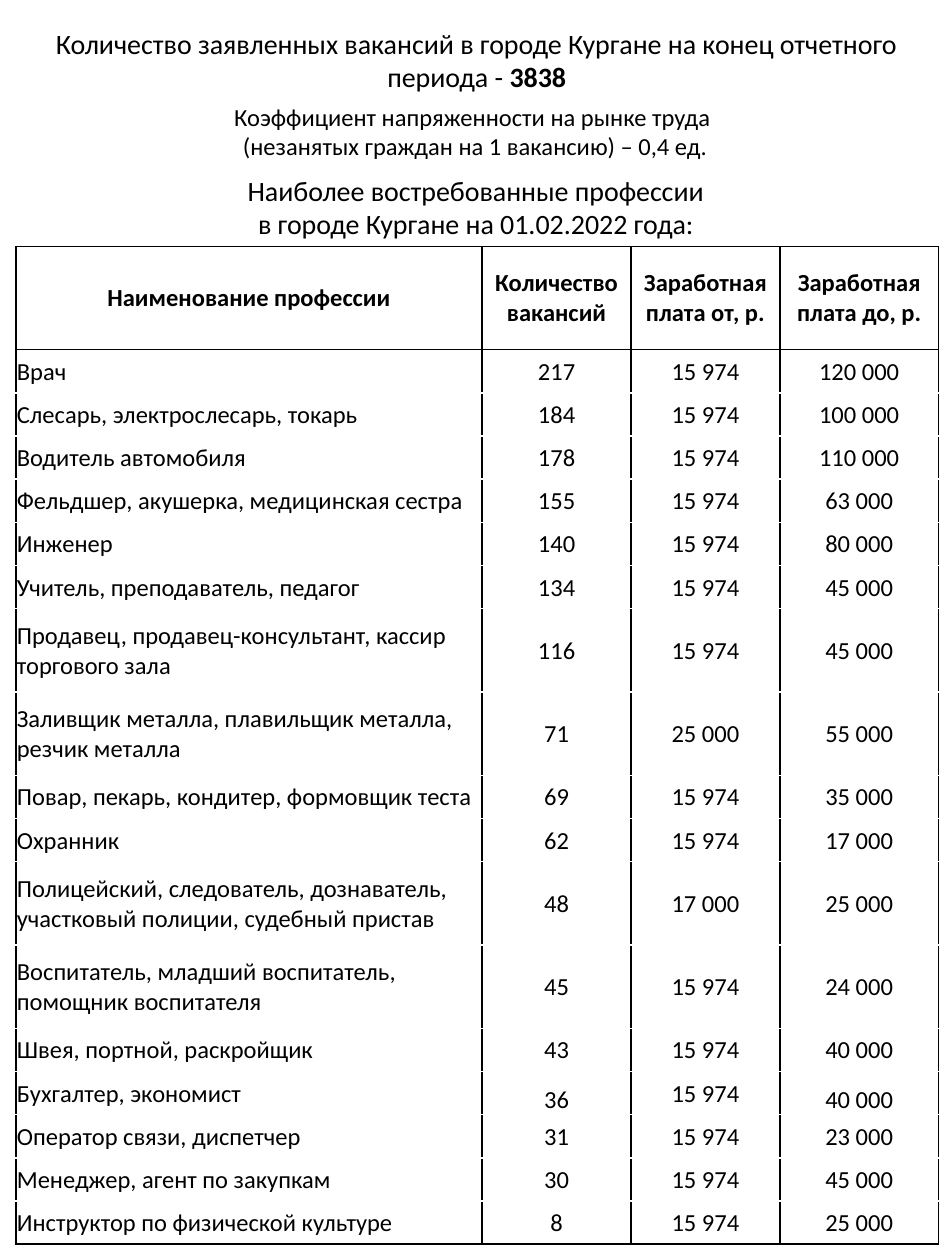
"""Build a slide listing the most wanted professions in the city of Kurgan."""
from dataclasses import dataclass

from lxml.etree import SubElement
from pptx import Presentation
from pptx.dml.color import RGBColor
from pptx.enum.text import MSO_ANCHOR, MSO_AUTO_SIZE, PP_ALIGN
from pptx.oxml.ns import qn
from pptx.util import Cm, Pt


@dataclass(frozen=True)
class Theme:
    font: str = "Calibri"
    ink: str = "000000"
    paper: str = "FFFFFF"
    heading: int = 16
    body: int = 14
    rule: int = 1


theme = Theme()


def write(frame, lines, size, align=PP_ALIGN.CENTER):
    frame.word_wrap = True
    for index, line in enumerate(lines):
        paragraph = frame.add_paragraph() if index else frame.paragraphs[0]
        paragraph.alignment = align
        for words, bold in line:
            run = paragraph.add_run()
            run.text = words
            run.font.name = theme.font
            run.font.size = Pt(size)
            run.font.bold = bold
            run.font.color.rgb = RGBColor.from_string(theme.ink)


def rule_cell(cell, top, bottom):
    properties = cell._tc.get_or_add_tcPr()
    sides = {"lnL": theme.ink, "lnR": theme.ink, "lnT": top, "lnB": bottom}
    for side, color in sides.items():
        line = SubElement(properties, qn(f"a:{side}"), w=str(Pt(theme.rule)))
        fill = SubElement(line, qn("a:solidFill"))
        SubElement(fill, qn("a:srgbClr"), val=color)


presentation = Presentation()
presentation.slide_width = Cm(19.05)
presentation.slide_height = Cm(25.4)
slide = presentation.slides.add_slide(presentation.slide_layouts[5])

title = slide.shapes.title
title.left, title.top, title.width, title.height = Cm(0.58), Cm(0.4), Cm(18.06), Cm(1.62)
title.text_frame.vertical_anchor = MSO_ANCHOR.TOP
title.text_frame.auto_size = MSO_AUTO_SIZE.SHAPE_TO_FIT_TEXT
write(title.text_frame, [[
    ("Количество заявленных вакансий в городе Кургане на конец отчетного периода - ", False),
    ("3838", True),
]], theme.heading)

captions = [
    (0.55, 1.93, 18.06, 1.45, theme.body,
     ["Коэффициент напряженности на рынке труда ",
      "(незанятых граждан на 1 вакансию) – 0,4 ед."]),
    (1.2, 3.37, 16.79, 1.62, theme.heading,
     ["Наиболее востребованные профессии",
      "в городе Кургане на 01.02.2022 года:"]),
]
for left, top, width, height, size, lines in captions:
    caption = slide.shapes.add_textbox(Cm(left), Cm(top), Cm(width), Cm(height))
    caption.text_frame.auto_size = MSO_AUTO_SIZE.SHAPE_TO_FIT_TEXT
    write(caption.text_frame, [[(line, False)] for line in lines], size)

header_height, single_height, double_height = 2.08, 0.87, 1.68
column_widths = [9.4, 3, 3, 3.2]
headers = ["Наименование профессии", "Количество вакансий",
           "Заработная плата от, р.", "Заработная плата до, р."]
professions = [
    ("Врач", "217", "15 974", "120 000"),
    ("Слесарь, электрослесарь, токарь", "184", "15 974", "100 000"),
    ("Водитель автомобиля", "178", "15 974", "110 000"),
    ("Фельдшер, акушерка, медицинская сестра", "155", "15 974", "63 000"),
    ("Инженер", "140", "15 974", "80 000"),
    ("Учитель, преподаватель, педагог", "134", "15 974", "45 000"),
    ("Продавец, продавец-консультант, кассир торгового зала", "116", "15 974", "45 000"),
    ("Заливщик металла, плавильщик металла, резчик металла", "71", "25 000", "55 000"),
    ("Повар, пекарь, кондитер, формовщик теста", "69", "15 974", "35 000"),
    ("Охранник", "62", "15 974", "17 000"),
    ("Полицейский, следователь, дознаватель, участковый полиции, судебный пристав",
     "48", "17 000", "25 000"),
    ("Воспитатель, младший воспитатель, помощник воспитателя", "45", "15 974", "24 000"),
    ("Швея, портной, раскройщик", "43", "15 974", "40 000"),
    ("Бухгалтер, экономист", "36", "15 974", "40 000"),
    ("Оператор связи, диспетчер", "31", "15 974", "23 000"),
    ("Менеджер, агент по закупкам", "30", "15 974", "45 000"),
    ("Инструктор по физической культуре", "8", "15 974", "25 000"),
]
longest_single_line = 40
low_set_cells = [("Бухгалтер, экономист", 1), ("Бухгалтер, экономист", 3)]

heights = [header_height] + [
    double_height if len(profession[0]) > longest_single_line else single_height
    for profession in professions
]
vacancies = slide.shapes.add_table(
    len(heights), len(headers), Cm(0.32), Cm(4.97), Cm(sum(column_widths)), Cm(sum(heights))
).table
vacancies.first_row = False
vacancies.horz_banding = False
for column, width in zip(vacancies.columns, column_widths):
    column.width = Cm(width)

last_row = len(professions)
for row_index, values in enumerate([headers, *professions]):
    vacancies.rows[row_index].height = Cm(heights[row_index])
    is_header = row_index == 0
    top = theme.ink if row_index <= 1 else theme.paper
    bottom = theme.ink if row_index in (0, last_row) else theme.paper
    for column_index, value in enumerate(values):
        cell = vacancies.cell(row_index, column_index)
        rule_cell(cell, top, bottom)
        cell.fill.solid()
        cell.fill.fore_color.rgb = RGBColor.from_string(theme.paper)
        is_low = (values[0], column_index) in low_set_cells
        cell.vertical_anchor = MSO_ANCHOR.BOTTOM if is_low else MSO_ANCHOR.MIDDLE
        if not is_header:
            cell.margin_left = cell.margin_right = cell.margin_top = Cm(0.02)
            cell.margin_bottom = Cm(0)
        is_name = column_index == 0 and not is_header
        align = PP_ALIGN.LEFT if is_name else PP_ALIGN.CENTER
        write(cell.text_frame, [[(value, is_header)]], theme.body, align)

presentation.save("out.pptx")
